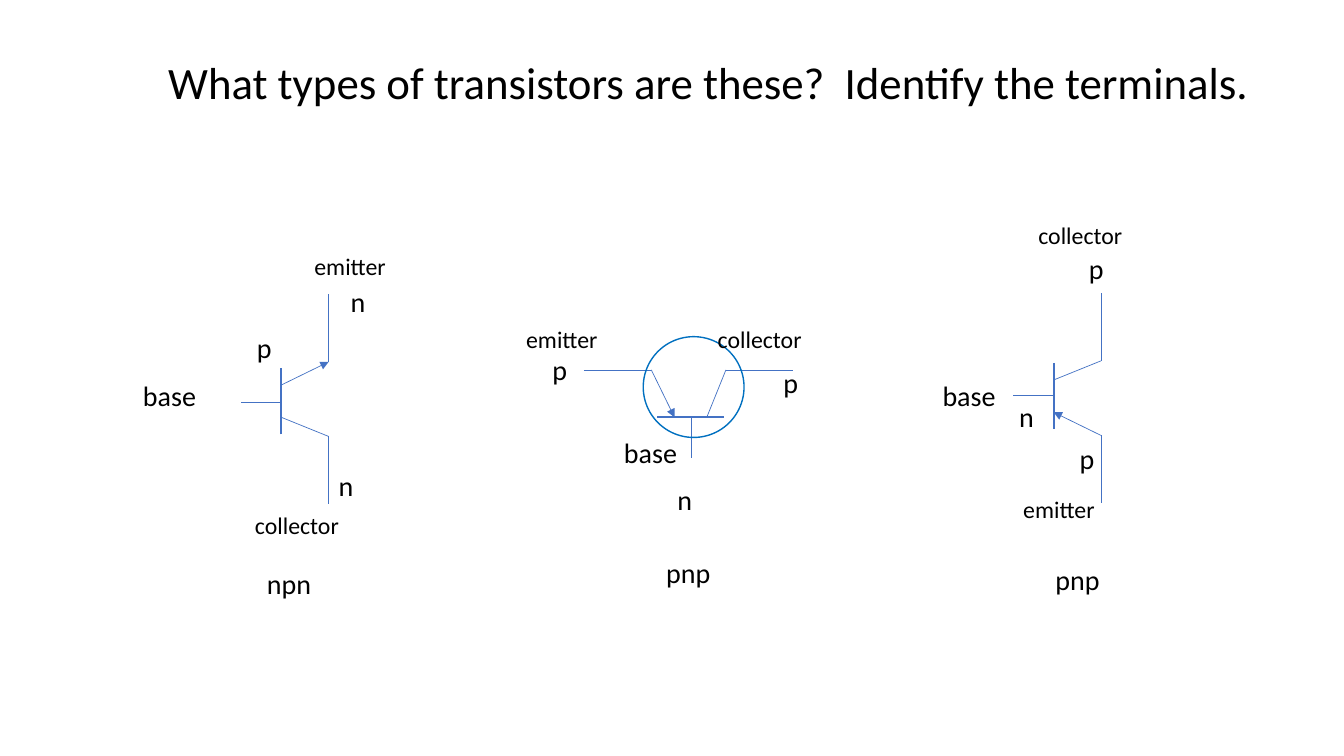
from pptx import Presentation
from pptx.dml.color import RGBColor
from pptx.enum.shapes import MSO_CONNECTOR, MSO_SHAPE
from pptx.enum.text import MSO_ANCHOR
from pptx.oxml.ns import qn
from pptx.util import Inches, Pt
from lxml.etree import SubElement

# Content: label positions are the top left corners of their boxes, in inches
TITLE = "What types of transistors are these?  Identify the terminals."
TRANSISTORS = [
    {
        "type": "pnp", "bar_centre": (6.85, 4.14), "circle": (6.38, 3.34, 1),
        "out": (0, -1), "toward_emitter": (-1, 0),
        "labels": [
            ("n", 6.62, 4.78), ("p", 5.38, 3.49), ("p", 7.67, 3.61),
            ("base", 6.09, 4.31), ("emitter", 5.12, 3.23),
            ("collector", 7.02, 3.23), ("pnp", 6.51, 5.5),
        ],
    },
    {
        "type": "pnp", "bar_centre": (10.45, 3.93), "circle": None,
        "out": (1, 0), "toward_emitter": (0, 1),
        "labels": [
            ("p", 10.61, 4.37), ("n", 10.01, 3.95), ("p", 10.7, 2.48),
            ("base", 9.25, 3.74), ("emitter", 10.05, 4.91),
            ("collector", 10.2, 2.2), ("pnp", 10.37, 5.57),
        ],
    },
    {
        "type": "npn", "bar_centre": (2.79, 3.98), "circle": None,
        "out": (1, 0), "toward_emitter": (0, -1),
        "labels": [
            ("p", 2.45, 3.27), ("n", 3.38, 2.81), ("n", 3.26, 4.64),
            ("base", 1.32, 3.74), ("emitter", 3.02, 2.5),
            ("collector", 2.43, 5.07), ("npn", 2.55, 5.61),
        ],
    },
]

THEME = {
    "font": "Calibri", "text": RGBColor(0, 0, 0),
    "wire": RGBColor(0x44, 0x72, 0xC4), "circle": RGBColor(0x00, 0x70, 0xC0),
    "title_size": 32, "label_size": 20, "terminal_size": 17,
    "wire_width": 0.5, "bar_width": 1.5, "circle_width": 1,
}

# Label box sizes
LABEL_SIZES = {
    "n": (0.61, 0.44), "p": (0.61, 0.44), "base": (0.8, 0.56),
    "emitter": (0.94, 0.56), "collector": (1.06, 0.56),
    "npn": (0.94, 0.56), "pnp": (0.94, 0.56),
}

# Symbol measures, from the middle of the bar
HALF_BAR = 0.33
BRANCH_DEPTH = 0.47
BRANCH_START = 0.16
EMITTER_BEND, COLLECTOR_BEND = 0.39, -0.35
LEAD = 0.67
BASE_LEAD, BASE_SHIFT = 0.4, -0.01


def add_text(slide, text, left, top, width, height, *, size,
             line_spacing=0.9, space_before=10, anchor=MSO_ANCHOR.TOP):
    box = slide.shapes.add_textbox(
        Inches(left), Inches(top), Inches(width), Inches(height))
    frame = box.text_frame
    frame.word_wrap = True
    frame.vertical_anchor = anchor
    paragraph = frame.paragraphs[0]
    paragraph.line_spacing = line_spacing
    paragraph.space_before = Pt(space_before)
    run = paragraph.add_run()
    run.text = text
    run.font.name = THEME["font"]
    run.font.size = Pt(size)
    run.font.color.rgb = THEME["text"]


def add_wire(slide, start, end, width=THEME["wire_width"], arrow=False):
    wire = slide.shapes.add_connector(
        MSO_CONNECTOR.STRAIGHT, *(Inches(value) for value in (*start, *end)))
    wire.line.color.rgb = THEME["wire"]
    wire.line.width = Pt(width)
    if arrow:
        SubElement(wire.line._get_or_add_ln(), qn("a:tailEnd"), type="triangle")
    SubElement(wire._element.spPr, qn("a:effectLst"))


def draw_transistor(slide, transistor):
    centre_x, centre_y = transistor["bar_centre"]
    out_x, out_y = transistor["out"]
    emitter_x, emitter_y = transistor["toward_emitter"]

    def point(out, along):
        """Turn symbol measures into a place on the slide."""
        return (centre_x + out * out_x + along * emitter_x,
                centre_y + out * out_y + along * emitter_y)

    # Leads of emitter and collector
    emitter_bend = point(BRANCH_DEPTH, EMITTER_BEND)
    collector_bend = point(BRANCH_DEPTH, COLLECTOR_BEND)
    add_wire(slide, point(BRANCH_DEPTH, EMITTER_BEND + LEAD), emitter_bend)
    add_wire(slide, collector_bend, point(BRANCH_DEPTH, COLLECTOR_BEND - LEAD))

    # Bar and branches: the arrow points away from the bar on an npn type
    add_wire(slide, point(0, -HALF_BAR), point(0, HALF_BAR), THEME["bar_width"])
    arrow_ends = [emitter_bend, point(0, BRANCH_START)]
    if transistor["type"] == "npn":
        arrow_ends.reverse()
    add_wire(slide, *arrow_ends, arrow=True)
    add_wire(slide, point(0, -BRANCH_START), collector_bend)

    # Base lead
    add_wire(slide, point(0, BASE_SHIFT), point(-BASE_LEAD, BASE_SHIFT))

    # Enclosing circle
    if transistor["circle"]:
        left, top, diameter = (Inches(value) for value in transistor["circle"])
        circle = slide.shapes.add_shape(
            MSO_SHAPE.OVAL, left, top, diameter, diameter)
        circle.shadow.inherit = False
        circle.fill.background()
        circle.line.color.rgb = THEME["circle"]
        circle.line.width = Pt(THEME["circle_width"])


def label_transistor(slide, transistor):
    for label, left, top in transistor["labels"]:
        terminal = label in ("emitter", "collector")
        add_text(slide, label, left, top, *LABEL_SIZES[label],
                 size=THEME["terminal_size" if terminal else "label_size"],
                 line_spacing=0.8 if terminal else 0.9)


def main():
    deck = Presentation()
    deck.slide_width, deck.slide_height = Inches(13.33), Inches(7.5)
    slide = deck.slides.add_slide(deck.slide_layouts[6])

    add_text(slide, TITLE, 1.57, 0.37, 11.1, 0.95, size=THEME["title_size"],
             space_before=0, anchor=MSO_ANCHOR.MIDDLE)
    for transistor in TRANSISTORS:
        draw_transistor(slide, transistor)
    for transistor in TRANSISTORS:
        label_transistor(slide, transistor)

    deck.save("out.pptx")


if __name__ == "__main__":
    main()
